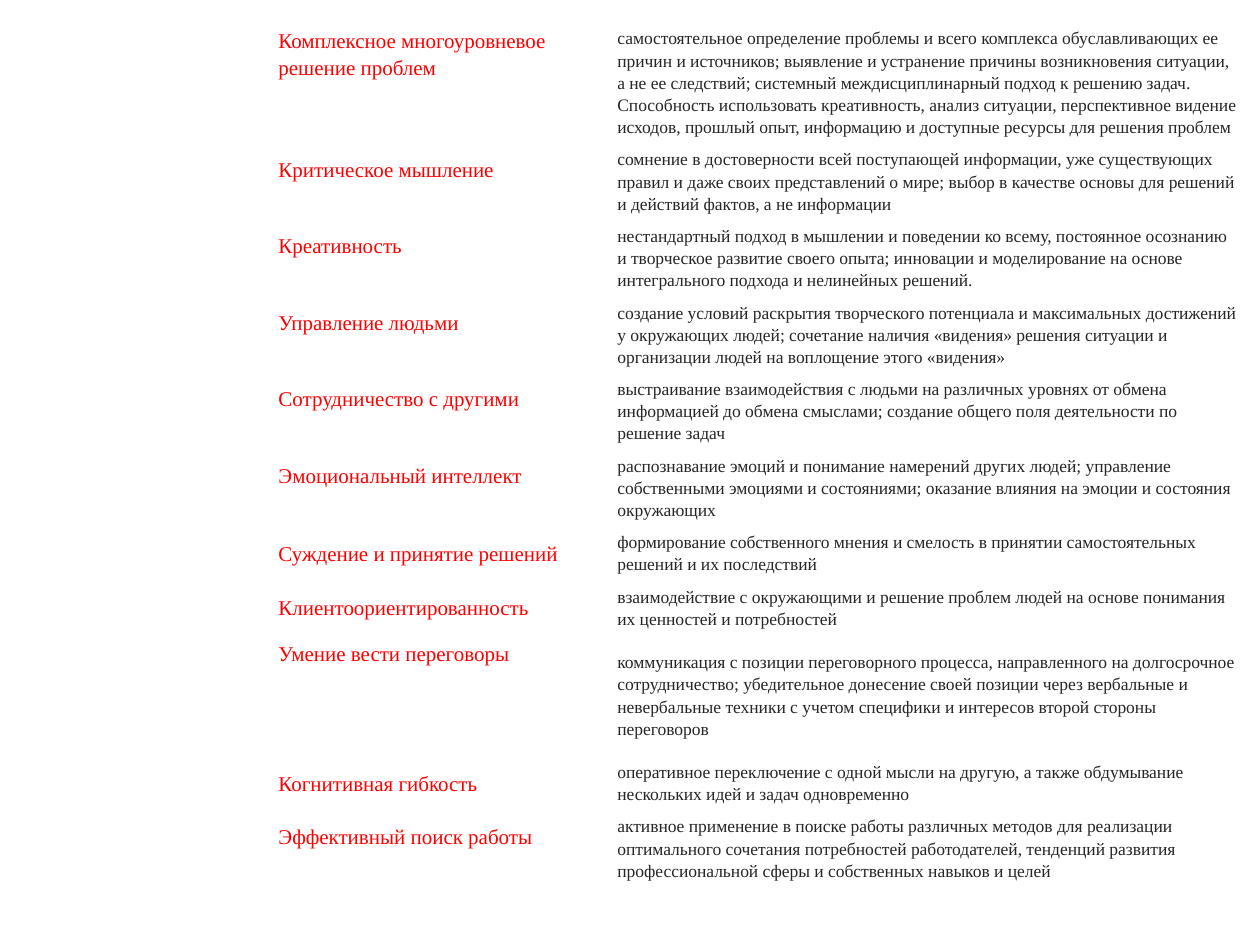
from pptx import Presentation
from pptx.dml.color import RGBColor
from pptx.enum.text import MSO_ANCHOR
from pptx.util import Inches, Pt

FONT = "Times New Roman"
RED, INK = "FF0000", "262626"
INSET = 0.04
COLUMN_WIDTHS = (2.69, 4.99)

# Row kinds: height, label anchor, label top inset
TALL = (0.96, MSO_ANCHOR.TOP, INSET)
MEDIUM = (0.6, MSO_ANCHOR.TOP, 0.1)
SHORT = (0.43, MSO_ANCHOR.MIDDLE, INSET)

SKILLS = [
    (TALL, "Комплексное многоуровневое решение проблем",
     "самостоятельное определение проблемы и всего комплекса обуславливающих ее причин "
     "и источников; выявление и устранение причины возникновения ситуации, а не ее "
     "следствий; системный междисциплинарный подход к решению задач. Способность "
     "использовать креативность, анализ ситуации, перспективное видение исходов, прошлый "
     "опыт, информацию и доступные ресурсы для решения проблем"),
    (MEDIUM, "Критическое мышление",
     "сомнение в достоверности всей поступающей информации, уже существующих правил и "
     "даже своих представлений о мире; выбор в качестве основы для решений и действий "
     "фактов, а не информации"),
    (MEDIUM, "Креативность",
     "нестандартный подход в мышлении и поведении ко всему, постоянное осознанию и "
     "творческое развитие своего опыта; инновации и моделирование на основе "
     "интегрального подхода и нелинейных решений."),
    (MEDIUM, "Управление людьми",
     "создание условий раскрытия творческого потенциала и максимальных достижений у "
     "окружающих людей; сочетание наличия «видения» решения ситуации и организации "
     "людей на воплощение этого «видения»"),
    (MEDIUM, "Сотрудничество с другими",
     "выстраивание взаимодействия с людьми на различных уровнях от обмена информацией "
     "до обмена смыслами; создание общего поля деятельности по решение задач"),
    (MEDIUM, "Эмоциональный интеллект",
     "распознавание эмоций и понимание намерений других людей; управление собственными "
     "эмоциями и состояниями; оказание влияния на эмоции и состояния окружающих"),
    (SHORT, "Суждение и принятие решений",
     "формирование собственного мнения и смелость в принятии самостоятельных решений и "
     "их последствий"),
    (SHORT, "Клиентоориентированность",
     "взаимодействие с окружающими и решение проблем людей на основе понимания их "
     "ценностей и потребностей"),
    (TALL, "Умение вести переговоры",
     "коммуникация с позиции переговорного процесса, направленного на долгосрочное "
     "сотрудничество; убедительное донесение своей позиции через вербальные и "
     "невербальные техники с учетом специфики и интересов второй стороны переговоров"),
    (SHORT, "Когнитивная гибкость",
     "оперативное переключение с одной мысли на другую, а также обдумывание нескольких "
     "идей и задач одновременно"),
    (MEDIUM, "Эффективный поиск работы",
     "активное применение в поиске работы различных методов для реализации оптимального "
     "сочетания потребностей работодателей, тенденций развития профессиональной сферы и "
     "собственных навыков и целей"),
]


def rgb(hex_color):
    return RGBColor.from_string(hex_color)


def write_cell(cell, text, size, color, anchor=MSO_ANCHOR.MIDDLE, top=INSET):
    cell.fill.background()
    cell.vertical_anchor = anchor
    cell.margin_left = cell.margin_right = cell.margin_bottom = Inches(INSET)
    cell.margin_top = Inches(top)
    paragraph = cell.text_frame.paragraphs[0]
    paragraph.line_spacing = 1.15
    run = paragraph.add_run()
    run.text = text
    run.font.name = FONT
    run.font.size = Pt(size)
    run.font.color.rgb = rgb(color)


def add_skills_table(slide, left, top, width, height):
    table = slide.shapes.add_table(
        len(SKILLS), len(COLUMN_WIDTHS),
        Inches(left), Inches(top), Inches(width), Inches(height)).table
    table.first_row = table.horz_banding = False
    for column, column_width in zip(table.columns, COLUMN_WIDTHS):
        column.width = Inches(column_width)

    # One row per skill: name on the left, meaning on the right
    for index, (kind, skill, meaning) in enumerate(SKILLS):
        row_height, anchor, label_top = kind
        table.rows[index].height = Inches(row_height)
        write_cell(table.cell(index, 0), skill, 12, RED, anchor=anchor, top=label_top)
        write_cell(table.cell(index, 1), meaning, 10, INK)


def main():
    deck = Presentation()
    deck.slide_width, deck.slide_height = Inches(10), Inches(7.5)
    slide = deck.slides.add_slide(deck.slide_layouts[6])
    table_height = sum(kind[0] for kind, _, _ in SKILLS)
    add_skills_table(slide, 2.17, 0.17, sum(COLUMN_WIDTHS), table_height)
    deck.save("out.pptx")


if __name__ == "__main__":
    main()
